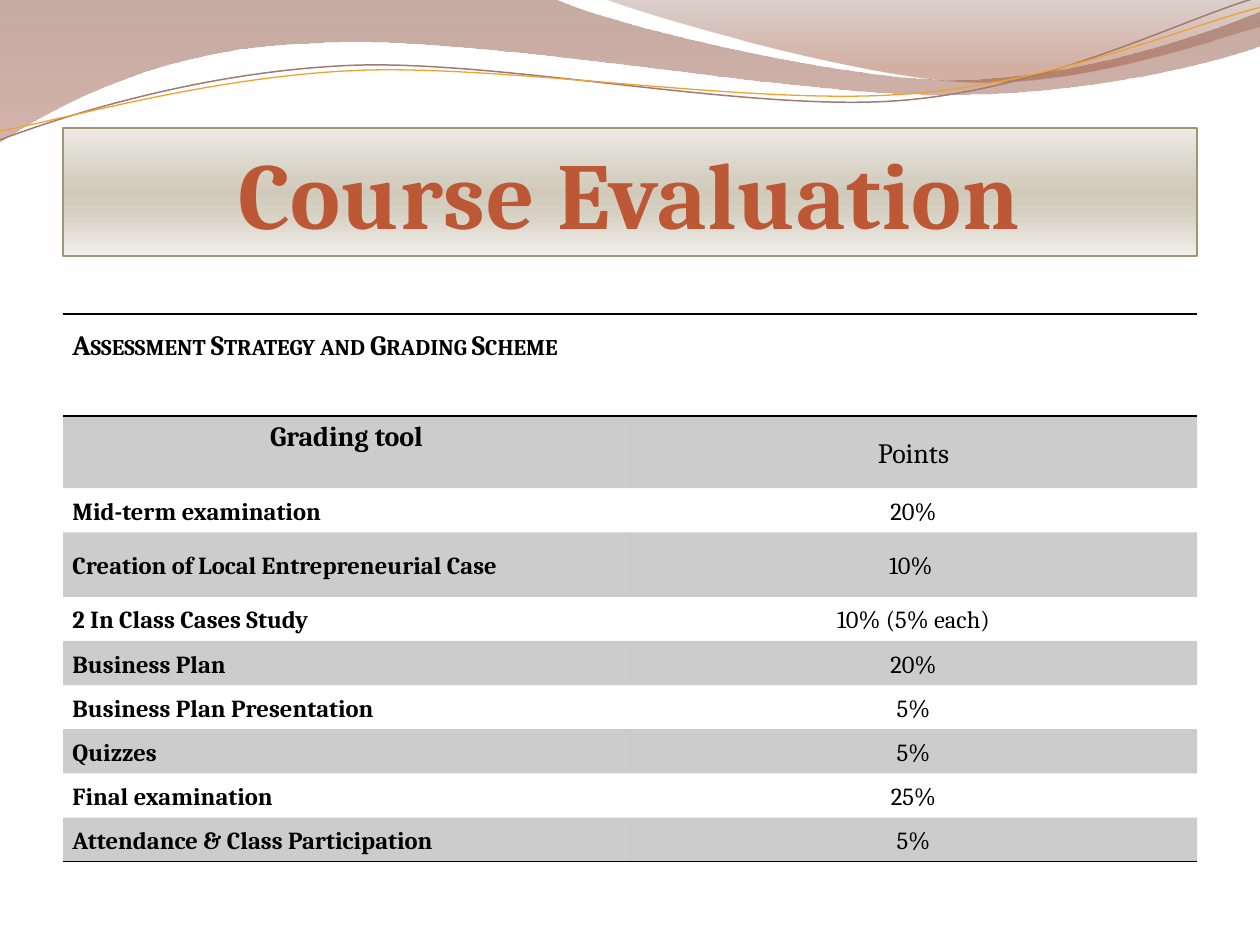
from dataclasses import dataclass
from lxml.etree import SubElement
from pptx import Presentation
from pptx.dml.color import RGBColor as Rgb
from pptx.enum.shapes import MSO_SHAPE as Kind
from pptx.enum.text import MSO_ANCHOR as Anchor, PP_ALIGN as Align
from pptx.oxml.ns import qn
from pptx.util import Cm, Pt


@dataclass(frozen=True)
class Theme:
    font: str = "Cambria"
    ink: str = "000000"
    edge: str = "A19574"
    mauve: str = "A07B71"
    gold: str = "F0A22E"
    # Gradient stops: position, colour, opacity (all but colour in percent)
    wave: tuple = ((0, "814733", 45), (100, "B17667", 55))
    crest: tuple = ((0, "8C6359", 30), (80, "A15135", 45))
    banner: tuple = ((0, "EDEBE6", 100), (40, "D4CFC1", 100), (50, "D1CABB", 100),
                     (65, "D4CFC1", 100), (100, "F1EFEB", 100))
    rust: tuple = ((25, "BD5836", 100), (100, "893D23", 100))
    shade: int = 20
    title: int = 54
    head: int = 16
    body: int = 14


THEME = Theme()
GRID = 100  # outline units per cm
NO_STYLE = "{2D5ABB26-0587-4C30-8999-92F81FD0307C}"

# Each outline: a start, then points (2 numbers) or Bezier curves (6 numbers), in cm
WAVE = [(0, 0), (11.18, -0.03), (12.09, 0.43, 16.87, 1.6, 19.25, 1.6),
        (21.67, 1.6, 24.33, 0.66, 25.4, 0.23), (25.43, 0.91),
        (24.97, 1.12, 22.1, 1.93, 18.95, 1.91), (15.8, 1.91, 9.7, 0.71, 6.53, 0.86),
        (3.28, 0.91, 1.17, 2.11, -0.03, 2.87)]
CREST = [(12.17, -0.03), (12.93, 0.28, 17.32, 1.57, 19.53, 1.65),
         (21.74, 1.75, 24.41, 0.81, 25.4, 0.53), (25.4, 0)]
MAUVE = [(0, 2.82), (1.22, 2.36, 4.01, 1.45, 7.04, 1.32),
         (10.03, 1.19, 15.06, 2.26, 18.11, 2.03), (21.16, 1.8, 23.83, 0.38, 25.35, -0.05)]
GOLD = [(0, 2.64), (1.19, 2.44, 4.17, 1.55, 7.19, 1.42),
        (10.24, 1.3, 15.16, 2.13, 18.21, 1.9), (21.23, 1.7, 23.9, 0.53, 25.4, 0.15)]

HEADING = "Assessment Strategy and Grading Scheme"
GRADES = [
    ("Grading tool", "Points"),
    ("Mid-term examination", "20%"),
    ("Creation of Local Entrepreneurial Case", "10% "),
    ("2 In Class Cases Study", "10% (5% each)"),
    ("Business Plan", "20%"),
    ("Business Plan Presentation", "5%"),
    ("Quizzes", "5%"),
    ("Final examination", "25%"),
    ("Attendance & Class Participation", "5%"),
]


def tint(parent, color, alpha):
    node = SubElement(parent, qn("a:srgbClr"), val=color)
    if alpha < 100:
        SubElement(node, qn("a:alpha"), val=str(alpha * 1000))


def blend(fill, owner, stops):
    """Fill with a top-to-bottom gradient."""
    fill.solid()
    old = owner.find(qn("a:solidFill"))
    grad = old.makeelement(qn("a:gradFill"), {"rotWithShape": "1"})
    row = SubElement(grad, qn("a:gsLst"))
    for pos, color, alpha in stops:
        tint(SubElement(row, qn("a:gs"), pos=str(pos * 1000)), color, alpha)
    SubElement(grad, qn("a:lin"), ang="5400000", scaled="0")
    owner.replace(old, grad)


def put(frame, words, size, bold=False, align=Align.LEFT, space=1.0,
        color=THEME.ink, stops=None, track=None, small=False):
    """Write one paragraph into a text frame."""
    frame.word_wrap = True
    para = frame.paragraphs[0]
    para.alignment, para.line_spacing = align, space
    run = para.add_run()
    run.text = words
    font = run.font
    font.name, font.size, font.bold = THEME.font, Pt(size), bold
    marks = run._r.get_or_add_rPr()
    if stops:
        blend(font.fill, marks, stops)
    else:
        font.color.rgb = Rgb.from_string(color)
    if track:
        marks.set("spc", str(int(track * 100)))
    if small:
        marks.set("cap", "small")


def draw(slide, left, top, outline, close):
    """Build the outline from its end points, then bend the curved parts."""
    parts = [[round(n * GRID) for n in part] for part in outline]
    ends = [part[-2:] for part in parts]
    low = [min(axis) for axis in zip(*ends)]
    pen = slide.shapes.build_freeform(*ends[0], scale=Cm(1) / GRID)
    pen.add_line_segments(ends[1:], close=close)
    shape = pen.convert_to_shape(left, top)
    shape.shadow.inherit = False
    sides = list(shape._element.iter(qn("a:lnTo")))
    for side, part in zip(sides, parts[1:]):
        if len(part) == 2:
            continue
        curve = side.makeelement(qn("a:cubicBezTo"), {})
        for x, y in zip(part[::2], part[1::2]):
            SubElement(curve, qn("a:pt"), x=str(x - low[0]), y=str(y - low[1]))
        side.getparent().replace(side, curve)
    return shape


def add_waves(slide, left, top):
    for outline, stops in ((WAVE, THEME.wave), (CREST, THEME.crest)):
        shape = draw(slide, left, top, outline, True)
        blend(shape.fill, shape._element.spPr, stops)
        shape.line.fill.background()
    for outline, color, width in ((MAUVE, THEME.mauve, 0.85), (GOLD, THEME.gold, 0.75)):
        shape = draw(slide, left, top, outline, False)
        shape.fill.background()
        shape.line.color.rgb = Rgb.from_string(color)
        shape.line.width = Pt(width)


def add_title(slide, left, top, width, height):
    box = slide.shapes.add_shape(Kind.RECTANGLE, left, top, width, height)
    box.shadow.inherit = False
    blend(box.fill, box._element.spPr, THEME.banner)
    box.line.color.rgb = Rgb.from_string(THEME.edge)
    box.line.width = Pt(0.94)
    box.text_frame.vertical_anchor = Anchor.MIDDLE
    put(box.text_frame, "Course Evaluation", THEME.title, bold=True,
        align=Align.CENTER, stops=THEME.rust, track=0.5)


def dress(cell, shaded, sides=()):
    """Set margins, fill and ruled sides of a cell."""
    cell.margin_left = cell.margin_right = Cm(0.19)
    cell.margin_top = cell.margin_bottom = 0
    props = cell._tc.get_or_add_tcPr()
    for side in sides:
        line = SubElement(props, qn("a:ln" + side), w=str(Pt(1)))
        tint(SubElement(line, qn("a:solidFill")), THEME.ink, 100)
    if shaded:
        tint(SubElement(props, qn("a:solidFill")), THEME.ink, THEME.shade)
    else:
        cell.fill.background()


def add_grades(slide, left, top, width):
    heights = [2.06, 1.45, 0.89, 1.3] + [0.89] * 6
    frame = slide.shapes.add_table(len(heights), 2, left, top, width, Cm(sum(heights)))
    table = frame.table
    table.first_row = table.horz_banding = False
    table._tbl.tblPr.find(qn("a:tableStyleId")).text = NO_STYLE
    for row, height in zip(table.rows, heights):
        row.height = Cm(height)

    for cell in table.rows[0].cells:
        dress(cell, False, "TB")
    head = table.cell(0, 0)
    head.merge(table.cell(0, 1))
    put(head.text_frame, HEADING, THEME.head, bold=True, space=1.5, small=True)

    for row, pair in enumerate(GRADES, 1):
        first = row == 1
        for col, words in enumerate(pair):
            cell = table.cell(row, col)
            dress(cell, row % 2 == 1, "B" if row == len(GRADES) else "")
            cell.vertical_anchor = Anchor.TOP if first and col == 0 else Anchor.MIDDLE
            put(cell.text_frame, words, THEME.head if first else THEME.body,
                bold=col == 0, space=1.15,
                align=Align.CENTER if first or col else Align.LEFT)


def main():
    deck = Presentation()
    deck.slide_width, deck.slide_height = Cm(25.4), Cm(19.05)
    slide = deck.slides.add_slide(deck.slide_layouts[6])
    left, width = Cm(1.27), Cm(22.86)
    add_waves(slide, 0, 0)
    add_title(slide, left, Cm(2.58), width, Cm(2.58))
    add_grades(slide, left, Cm(6.33), width)
    deck.save("out.pptx")


if __name__ == "__main__":
    main()
